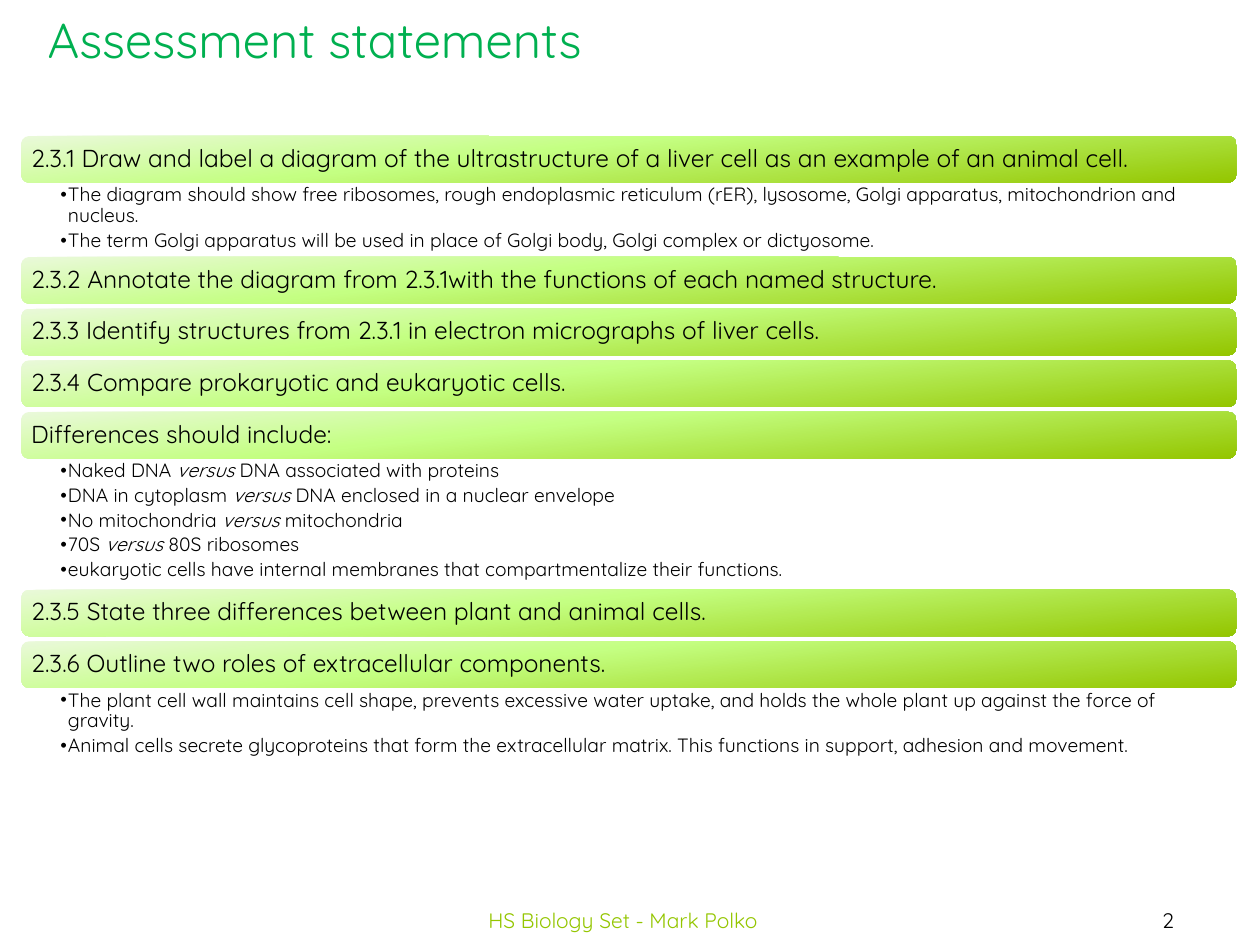
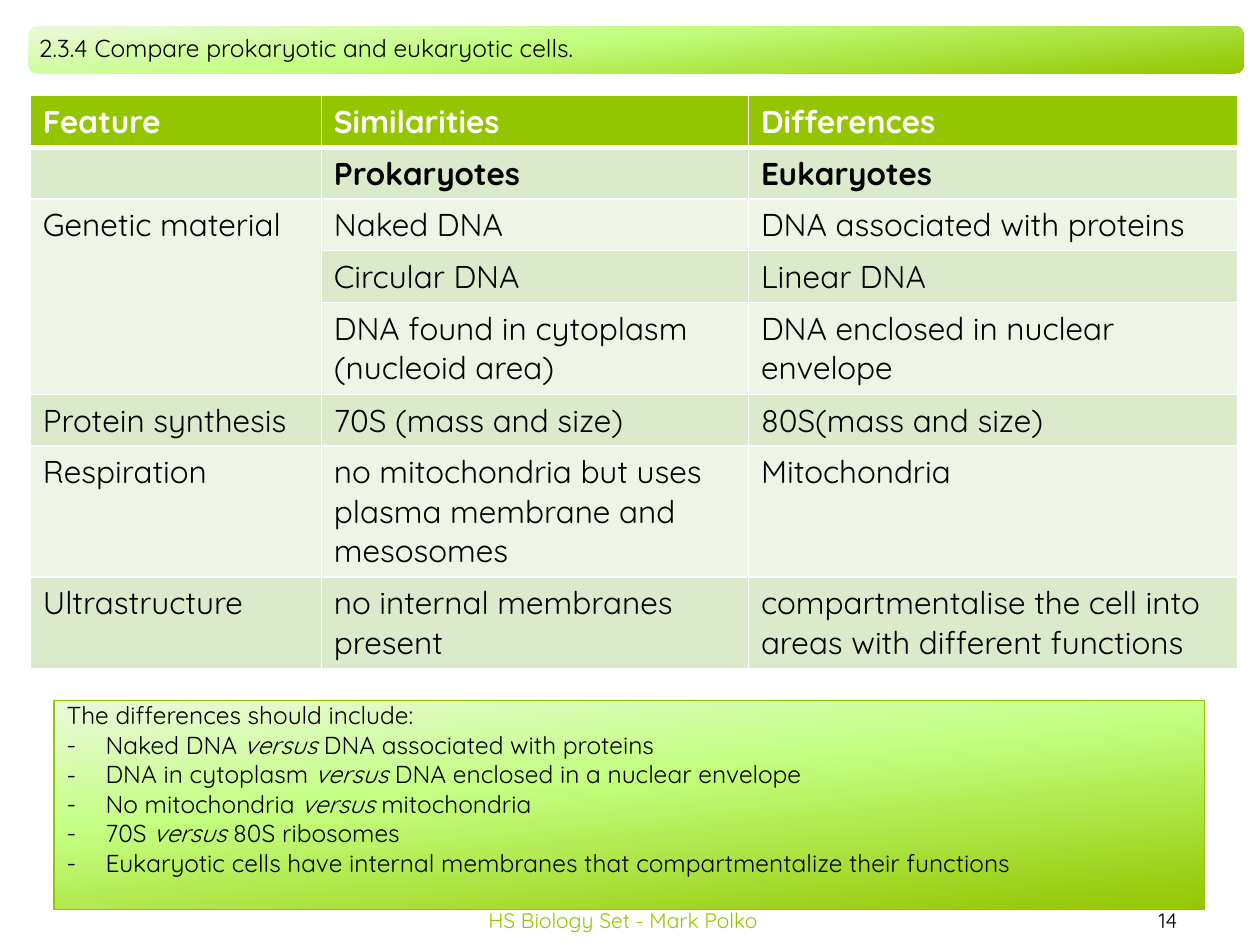
from dataclasses import dataclass
from itertools import product

from lxml.etree import SubElement
from pptx import Presentation
from pptx.dml.color import RGBColor
from pptx.enum.shapes import MSO_SHAPE as Shape
from pptx.enum.text import MSO_ANCHOR as Anchor, PP_ALIGN as Align
from pptx.oxml.ns import qn
from pptx.util import Inches, Pt

FONT = "Quicksand"
BLACK = RGBColor(0x00, 0x00, 0x00)
WHITE = RGBColor(0xFF, 0xFF, 0xFF)
TITLE_GREEN = RGBColor(0x00, 0xB0, 0x50)
LIME = RGBColor(0x94, 0xC6, 0x00)
BAND_DARK = RGBColor(0xDC, 0xEA, 0xCC)
BAND_LIGHT = RGBColor(0xEE, 0xF5, 0xE7)
GRADIENT = [(0, RGBColor(0xEA, 0xF9, 0xDA)), (40, RGBColor(0xC4, 0xFF, 0x82)), (100, LIME)]
GRADIENT_ANGLE = 84

FOOTER = "HS Biology Set - Mark Polko"
VERSUS = "versus "
COMPARE = "2.3.4 Compare prokaryotic and eukaryotic cells."
DIFFERENCES = (
    "Naked DNA versus DNA associated with proteins",
    "DNA in cytoplasm versus DNA enclosed in a nuclear envelope",
    "No mitochondria versus mitochondria",
    "70S versus 80S ribosomes",
)

BAR_WIDTH, BAR_HEIGHT, BAR_GAP = 9.64, 0.37, 0.04


@dataclass(frozen=True)
class Statement:
    heading: str
    points: tuple[str, ...] = ()
    points_height: float = BAR_GAP


STATEMENTS = [
    Statement(
        "2.3.1 Draw and label a diagram of the ultrastructure of a liver cell "
        "as an example of an animal cell.",
        ("The diagram should show free ribosomes, rough endoplasmic reticulum (rER), "
         "lysosome, Golgi apparatus, mitochondrion and nucleus.",
         "The term Golgi apparatus will be used in place of Golgi body, "
         "Golgi complex or dictyosome."),
        0.59),
    Statement("2.3.2 Annotate the diagram from 2.3.1with the functions of each named structure."),
    Statement("2.3.3 Identify structures from 2.3.1 in electron micrographs of liver cells."),
    Statement(COMPARE),
    Statement(
        "Differences should include:",
        DIFFERENCES + ("eukaryotic cells have internal membranes that "
                       "compartmentalize their functions.",),
        1.04),
    Statement("2.3.5 State three differences between plant and animal cells."),
    Statement(
        "2.3.6 Outline two roles of extracellular components.",
        ("The plant cell wall maintains cell shape, prevents excessive water uptake, "
         "and holds the whole plant up against the force of gravity.",
         "Animal cells secrete glycoproteins that form the extracellular matrix. "
         "This functions in support, adhesion and movement."),
        0.59),
]

COLUMN_WIDTHS = (2.31, 3.39, 3.88)
ONE_LINE, TWO_LINES, THREE_LINES = 0.41, 0.73, 1.04
ROW_HEIGHTS = (ONE_LINE,) * 4 + (TWO_LINES, ONE_LINE, THREE_LINES, TWO_LINES)
COMPARISON = [
    ("Feature", "Similarities", "Differences"),
    ("", "Prokaryotes", "Eukaryotes"),
    ("Genetic material", "Naked DNA", "DNA associated with proteins"),
    ("", "Circular DNA", "Linear DNA"),
    ("", "DNA found in cytoplasm (nucleoid area)", "DNA enclosed in nuclear envelope"),
    ("Protein synthesis", "70S (mass and size)", "80S(mass and size)"),
    ("Respiration", "no mitochondria but uses plasma membrane and mesosomes", "Mitochondria"),
    ("Ultrastructure", "no internal membranes present",
     "compartmentalise the cell into areas with different functions"),
]


def style_run(r, size: float, color: RGBColor = BLACK, bold: bool = False) -> None:
    r.font.name, r.font.size, r.font.bold = FONT, Pt(size), bold
    r.font.color.rgb = color


def write(p, text: str, size: float, color: RGBColor = BLACK) -> None:
    """Fill a paragraph, setting every "versus" in italics."""
    p.alignment = Align.LEFT
    before, versus, after = text.partition(VERSUS)
    for part in filter(None, (before, versus, after)):
        r = p.add_run()
        r.text = part
        style_run(r, size, color)
        r.font.italic = part == VERSUS


def set_bullet(p, char: str, indent: float) -> None:
    pPr = p._p.get_or_add_pPr()
    pPr.set("marL", str(Inches(indent)))
    pPr.set("indent", str(-Inches(indent)))
    SubElement(pPr, qn("a:buFont"), typeface=FONT)
    SubElement(pPr, qn("a:buChar"), char=char)


def set_insets(tf, left: float, top: float, right: float, bottom: float) -> None:
    tf.margin_left, tf.margin_top = Inches(left), Inches(top)
    tf.margin_right, tf.margin_bottom = Inches(right), Inches(bottom)


def add_text_box(slide, left: float, top: float, width: float, height: float):
    tf = slide.shapes.add_textbox(
        Inches(left), Inches(top), Inches(width), Inches(height)).text_frame
    tf.word_wrap = True
    return tf


def add_gradient_shape(slide, kind: Shape, left: float, top: float, width: float, height: float):
    sp = slide.shapes.add_shape(kind, Inches(left), Inches(top), Inches(width), Inches(height))
    sp.shadow.inherit = False
    sp.fill.gradient()
    grad = sp._element.spPr.find(qn("a:gradFill"))
    for child in list(grad):
        grad.remove(child)
    stops = SubElement(grad, qn("a:gsLst"))
    for position, color in GRADIENT:
        gs = SubElement(stops, qn("a:gs"), pos=str(position * 1000))
        SubElement(gs, qn("a:srgbClr"), val=str(color))
    SubElement(grad, qn("a:lin"), ang=str(GRADIENT_ANGLE * 60000), scaled="0")
    sp.line.fill.background()
    sp.text_frame.word_wrap = True
    return sp


def add_heading_bar(slide, left: float, top: float, text: str) -> None:
    sp = add_gradient_shape(slide, Shape.ROUNDED_RECTANGLE, left, top, BAR_WIDTH, BAR_HEIGHT)
    tf = sp.text_frame
    set_insets(tf, 0.06, 0.06, 0.06, 0.06)
    tf.vertical_anchor = Anchor.MIDDLE
    p = tf.paragraphs[0]
    write(p, text, 14)
    p.line_spacing = 0.9


def add_points(slide, left: float, top: float, statement: Statement) -> None:
    tf = add_text_box(slide, left, top, BAR_WIDTH, statement.points_height)
    set_insets(tf, 0.31, 0.02, 0.11, 0.02)
    for i, point in enumerate(statement.points):
        p = tf.add_paragraph() if i else tf.paragraphs[0]
        write(p, point, 11)
        p.line_spacing, p.space_after = 0.9, Pt(2.2)
        set_bullet(p, "•", 0.06)


def add_footer(slide, number: int) -> None:
    for text, left, width, color in ((str(number), 8.54, 1.46, BLACK), (FOOTER, 3.03, 3.83, LIME)):
        tf = add_text_box(slide, left, 7.1, width, 0.4)
        tf.vertical_anchor = Anchor.MIDDLE
        write(tf.paragraphs[0], text, 12, color)
        tf.paragraphs[0].alignment = Align.CENTER


def set_borders(cell, **widths: float) -> None:
    """Draw white borders; widths are points keyed by side (L, R, T, B)."""
    tcPr = cell._tc.get_or_add_tcPr()
    for side, width in widths.items():
        ln = SubElement(tcPr, qn(f"a:ln{side}"), w=str(Pt(width)))
        fill = SubElement(ln, qn("a:solidFill"))
        SubElement(fill, qn("a:srgbClr"), val=str(WHITE))


def add_comparison_table(slide, left: float, top: float) -> None:
    rows, cols = len(COMPARISON), len(COLUMN_WIDTHS)
    table = slide.shapes.add_table(
        rows, cols, Inches(left), Inches(top),
        Inches(sum(COLUMN_WIDTHS)), Inches(sum(ROW_HEIGHTS))).table
    for column, width in zip(table.columns, COLUMN_WIDTHS):
        column.width = Inches(width)
    for row, height in zip(table.rows, ROW_HEIGHTS):
        row.height = Inches(height)
    for i, j in product(range(rows), range(cols)):
        cell = table.cell(i, j)
        set_borders(cell, L=1, R=1, T=3 if i == 1 else 1, B=3 if i == 0 else 1)
        cell.fill.solid()
        cell.fill.fore_color.rgb = LIME if i == 0 else BAND_DARK if i % 2 else BAND_LIGHT
        cell.text_frame.text = COMPARISON[i][j]
        for r in cell.text_frame.paragraphs[0].runs:
            style_run(r, 18, WHITE if i == 0 else BLACK, bold=i < 2)
    table.cell(2, 0).merge(table.cell(4, 0))


def add_differences_box(slide) -> None:
    sp = add_gradient_shape(slide, Shape.RECTANGLE, 0.43, 5.56, 9.13, 1.66)
    sp.line.color.rgb, sp.line.width = LIME, Pt(0.75)
    tf = sp.text_frame
    set_insets(tf, 0.1, 0, 0.1, 0)
    tf.vertical_anchor = Anchor.TOP
    write(tf.paragraphs[0], "The differences should include:", 14)
    for point in DIFFERENCES + (
            "Eukaryotic cells have internal membranes that compartmentalize their functions",):
        p = tf.add_paragraph()
        write(p, point, 14)
        set_bullet(p, "-", 0.31)


def build_statements_slide(slide) -> None:
    add_footer(slide, 2)
    tf = add_text_box(slide, 0.28, 0.03, 4.56, 0.57)
    tf.word_wrap = False
    write(tf.paragraphs[0], "Assessment statements", 28, TITLE_GREEN)
    left, top = 0.17, 1.08
    for statement in STATEMENTS:
        add_heading_bar(slide, left, top, statement.heading)
        top += BAR_HEIGHT
        if statement.points:
            add_points(slide, left, top, statement)
        top += statement.points_height


def build_comparison_slide(slide) -> None:
    add_footer(slide, 14)
    add_heading_bar(slide, 0.23, 0.21, COMPARE)
    add_differences_box(slide)
    add_comparison_table(slide, 0.24, 0.76)


def main() -> None:
    prs = Presentation()
    prs.slide_width, prs.slide_height = Inches(10), Inches(7.5)
    for build in (build_statements_slide, build_comparison_slide):
        build(prs.slides.add_slide(prs.slide_layouts[6]))
    prs.save("out.pptx")


if __name__ == "__main__":
    main()
